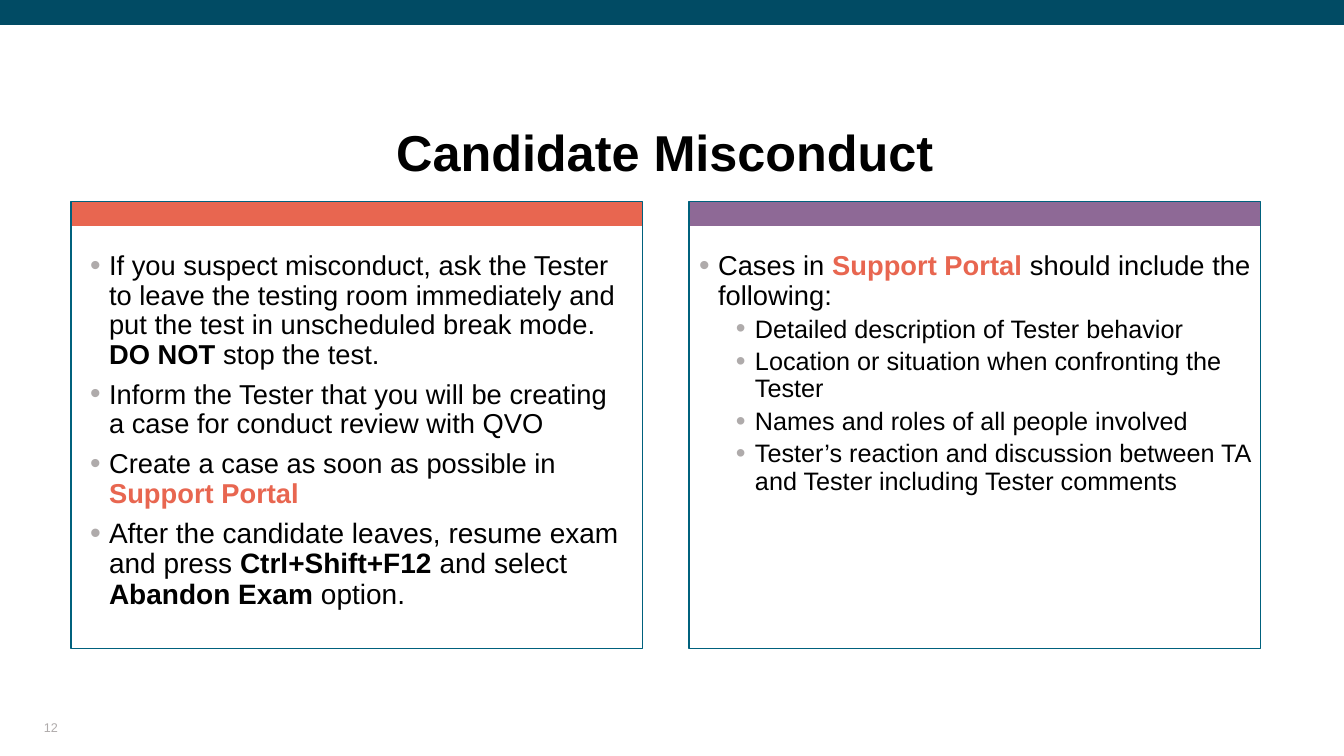
import pptx
import pptx.dml.color
import pptx.enum.shapes
import pptx.enum.text
import pptx.oxml.ns
import pptx.util
from lxml import etree

EMU_PER_PX = 914400 / 100.8
FONT = "Arial"
COLORS = {
    "banner": "014B64",
    "coral": "E86650",
    "purple": "8E6996",
    "outline": "00617D",
    "text": "000000",
    "muted": "AFABAB",
}

PANEL_TOP, PANEL_WIDTH, PANEL_HEIGHT, STRIPE_HEIGHT = 202, 572, 447, 24
HANG = 19
# Per outline level: left margin in px, space before in points
LEVELS = [(HANG, 7.5), (56, 3.8)]

# Each bullet: level, size in points, runs of (text, style)
ACTIONS = [
    (0, 19.5, [
        ("If you suspect misconduct, ask the Tester to leave the testing room "
         "immediately and put the test in unscheduled break mode.", ""),
        (" DO NOT", "bold"),
        (" stop the test.", ""),
    ]),
    (0, 19.5, [("Inform the Tester that you will be creating a case for "
                "conduct review with QVO", "")]),
    (0, 19.5, [("Create a case as soon as possible in ", ""),
               ("Support Portal", "accent")]),
    (0, 20, [
        ("After the candidate leaves, resume exam and press ", ""),
        ("Ctrl+Shift+F12", "bold"),
        (" and select ", ""),
        ("Abandon Exam", "bold"),
        (" option.", ""),
    ]),
]
CASE_CONTENTS = [
    (0, 19.5, [("Cases in ", ""), ("Support Portal ", "accent"),
               ("should include the following:", "")]),
    (1, 18, [("Detailed description of Tester behavior", "")]),
    (1, 18, [("Location or situation when confronting the Tester", "")]),
    (1, 18, [("Names and roles of all people involved", "")]),
    (1, 18, [("Tester’s reaction and discussion between TA and Tester "
              "including Tester comments", "")]),
]


def px(length):
    return pptx.util.Emu(round(length * EMU_PER_PX))


def rgb(name):
    return pptx.dml.color.RGBColor.from_string(COLORS[name])


def style_run(run, size, color="text", bold=False):
    run.font.name = FONT
    run.font.size = pptx.util.Pt(size)
    run.font.bold = bold
    run.font.color.rgb = rgb(color)


def set_frame(frame, insets, anchor):
    """Wrap the text and set left, top, right and bottom insets in px."""
    frame.word_wrap = True
    frame.vertical_anchor = anchor
    (frame.margin_left, frame.margin_top,
     frame.margin_right, frame.margin_bottom) = map(px, insets)


def add_rectangle(slide, left, top, width, height, fill=None, outline=None):
    rectangle = slide.shapes.add_shape(
        pptx.enum.shapes.MSO_SHAPE.RECTANGLE,
        px(left), px(top), px(width), px(height))
    rectangle.shadow.inherit = False
    if fill:
        rectangle.fill.solid()
        rectangle.fill.fore_color.rgb = rgb(fill)
    else:
        rectangle.fill.background()
    if outline:
        rectangle.line.color.rgb = rgb(outline)
        rectangle.line.width = pptx.util.Pt(0.75)
    else:
        rectangle.line.fill.background()
    return rectangle


def add_bullet(paragraph, level):
    """Give the paragraph a grey hanging bullet for its outline level."""
    properties = paragraph._p.get_or_add_pPr()
    properties.set("marL", str(px(LEVELS[level][0])))
    properties.set("indent", str(px(-HANG)))
    qn = pptx.oxml.ns.qn
    bullet_color = etree.SubElement(properties, qn("a:buClr"))
    etree.SubElement(bullet_color, qn("a:srgbClr"), val=COLORS["muted"])
    etree.SubElement(properties, qn("a:buSzPct"), val="110000")
    etree.SubElement(properties, qn("a:buFont"), typeface=FONT)
    etree.SubElement(properties, qn("a:buChar"), char="•")


def add_panel(slide, left, stripe_color, side_inset, bullets):
    """Draw an outlined panel with a coloured top stripe and bulleted text."""
    add_rectangle(slide, left, PANEL_TOP, PANEL_WIDTH, STRIPE_HEIGHT,
                  fill=stripe_color)
    panel = add_rectangle(slide, left, PANEL_TOP, PANEL_WIDTH, PANEL_HEIGHT,
                          outline="outline")
    frame = panel.text_frame
    set_frame(frame, (side_inset, 50, side_inset, 5),
              pptx.enum.text.MSO_ANCHOR.TOP)
    for index, (level, size, runs) in enumerate(bullets):
        paragraph = frame.add_paragraph() if index else frame.paragraphs[0]
        add_bullet(paragraph, level)
        paragraph.level = level
        paragraph.alignment = pptx.enum.text.PP_ALIGN.LEFT
        paragraph.line_spacing = 0.9
        if index:
            paragraph.space_before = pptx.util.Pt(LEVELS[level][1])
        for text, style in runs:
            run = paragraph.add_run()
            run.text = text
            style_run(run, size, "coral" if style == "accent" else "text",
                      bold=style != "")


def add_label(slide, text, left, top, width, height, size, color, anchor,
              bold=False):
    label = slide.shapes.add_textbox(px(left), px(top), px(width), px(height))
    set_frame(label.text_frame, (0, 0, 0, 0), anchor)
    label.text_frame.text = text
    paragraph = label.text_frame.paragraphs[0]
    style_run(paragraph.runs[0], size, color, bold)
    return paragraph


def main():
    presentation = pptx.Presentation()
    presentation.slide_width = px(1344)
    presentation.slide_height = px(756)
    slide = presentation.slides.add_slide(presentation.slide_layouts[6])

    add_rectangle(slide, 0, 0, 1344, 25, fill="banner")
    title = add_label(slide, "Candidate Misconduct", 44, 57, 1242, 128, 36,
                      "text", pptx.enum.text.MSO_ANCHOR.MIDDLE, bold=True)
    title.alignment = pptx.enum.text.PP_ALIGN.CENTER
    title.line_spacing = 2.0
    add_panel(slide, 71, "coral", 19, ACTIONS)
    add_panel(slide, 689, "purple", 10, CASE_CONTENTS)
    add_label(slide, "12", 44, 711, 302, 24, 9, "muted",
              pptx.enum.text.MSO_ANCHOR.BOTTOM)

    presentation.save("out.pptx")


if __name__ == "__main__":
    main()
